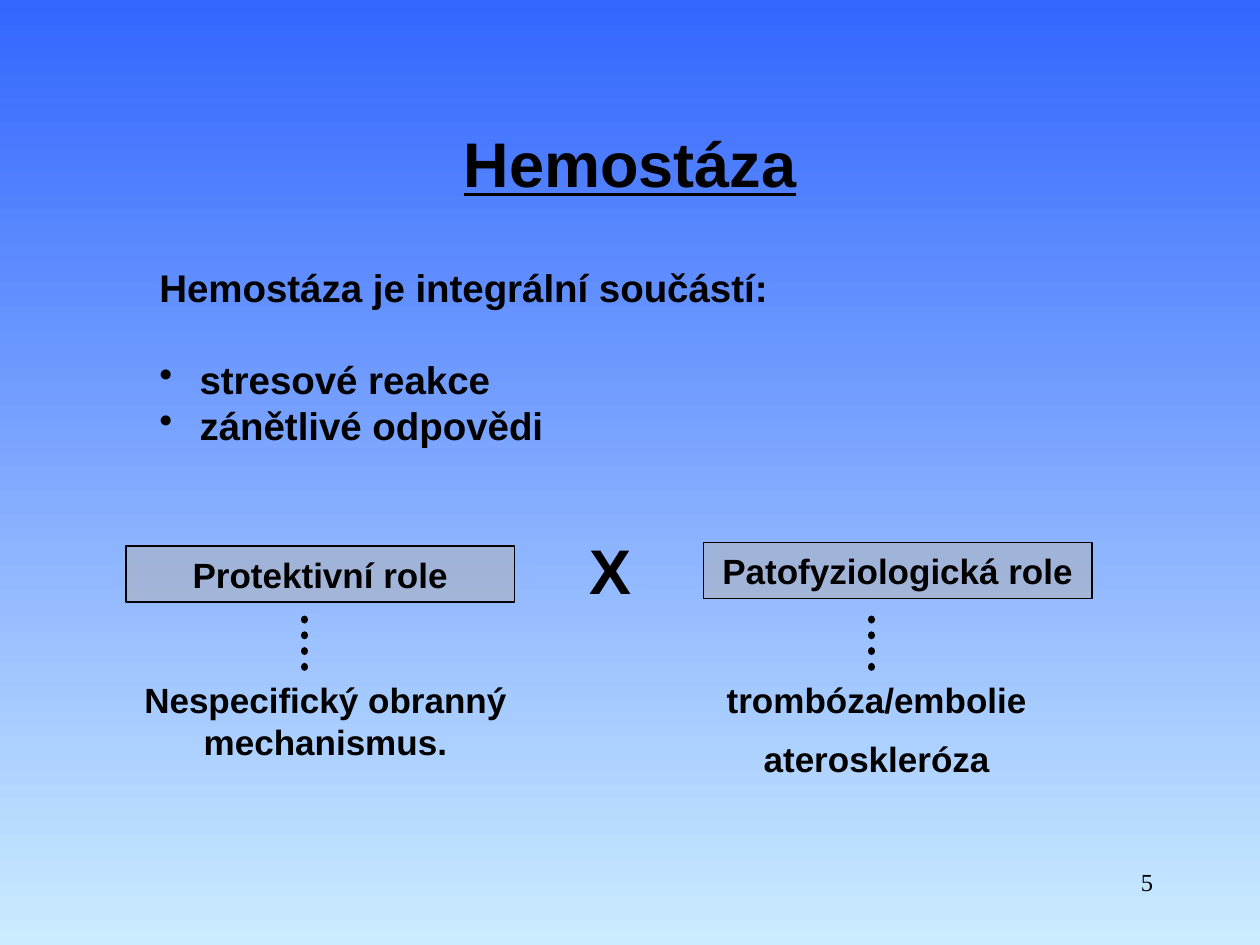
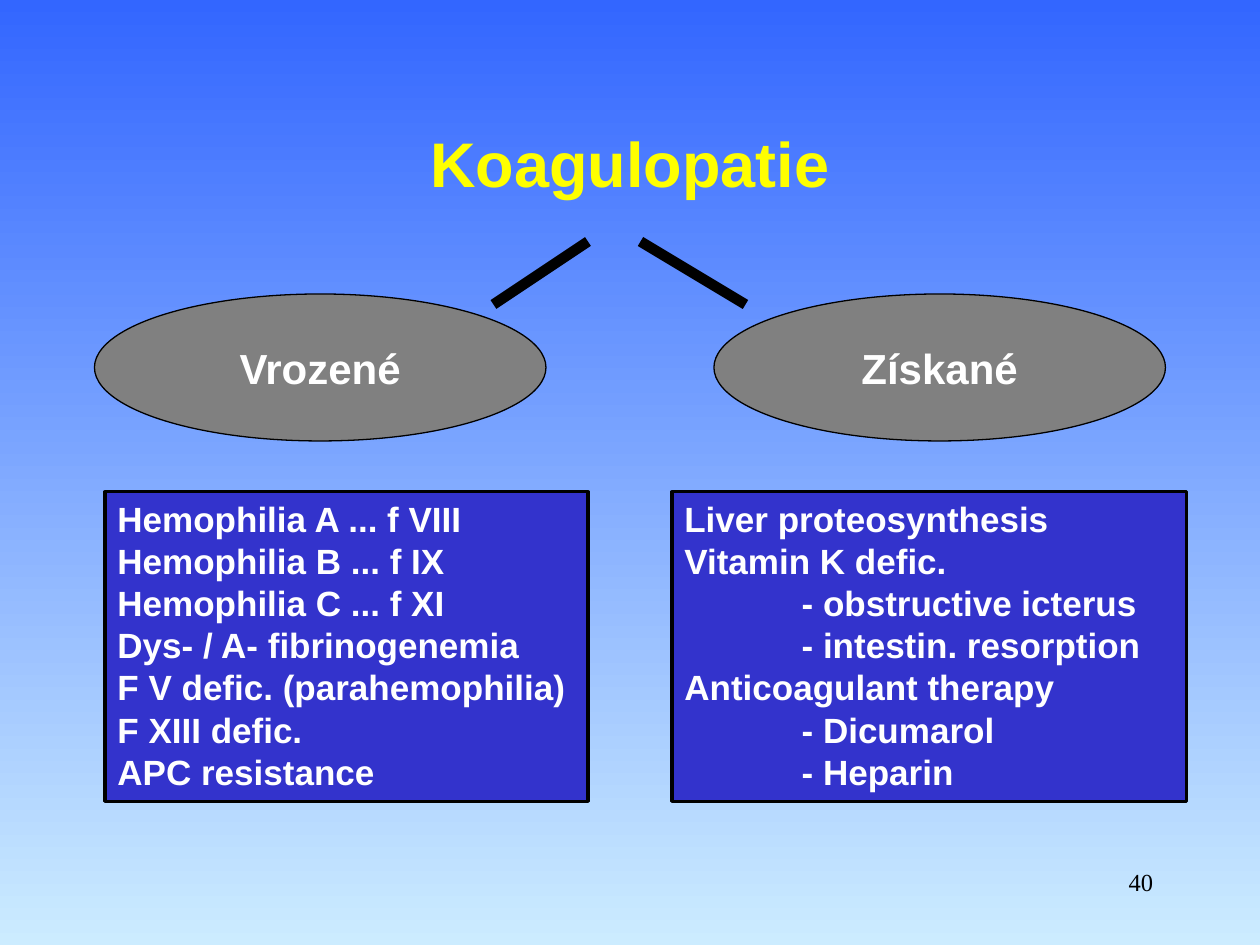
"""Build two slides on haemostasis and coagulopathies."""
from lxml import etree
from pptx import Presentation
from pptx.dml.color import RGBColor
from pptx.enum import dml, shapes, text
from pptx.oxml import ns
from pptx.util import Pt

SKY_TOP = RGBColor(0x33, 0x66, 0xFF)
SKY_BOTTOM = RGBColor(0xCC, 0xEC, 0xFF)
BLACK = RGBColor(0, 0, 0)
WHITE = RGBColor(0xFF, 0xFF, 0xFF)
YELLOW = RGBColor(0xFF, 0xFF, 0)
SILVER = RGBColor(0xB2, 0xB2, 0xB2)
GRAY = RGBColor(0x80, 0x80, 0x80)
INDIGO = RGBColor(0x33, 0x33, 0xCC)

LEFT, CENTER, RIGHT = text.PP_ALIGN.LEFT, text.PP_ALIGN.CENTER, text.PP_ALIGN.RIGHT
TOP, MIDDLE = text.MSO_ANCHOR.TOP, text.MSO_ANCHOR.MIDDLE
RECTANGLE, OVAL = shapes.MSO_SHAPE.RECTANGLE, shapes.MSO_SHAPE.OVAL

TITLE_AREA = (54, 48, 612, 90)
NUMBER_AREA = (516, 492, 150, 36)

INTRO = "Hemostáza je integrální součástí:"
INTRO_POINTS = ["stresové reakce", "zánětlivé odpovědi"]
ROLES = [
    {"name": "Protektivní role", "area": (72, 312, 222, 32), "dots_x": 174,
     "effects": ["Nespecifický obranný mechanismus."], "effects_area": (72, 384, 228, 55)},
    {"name": "Patofyziologická role", "area": (402, 310, 222, 32), "dots_x": 498,
     "effects": ["trombóza/embolie", "ateroskleróza"], "effects_area": (378, 384, 246, 68)},
]
ORIGINS = [
    {"name": "Vrozené", "oval_x": 54, "branch": (336, 138, 282, 174),
     "list_x": 60, "list_width": 276,
     "causes": ["Hemophilia A ... f VIII", "Hemophilia B ... f IX", "Hemophilia C ... f XI",
                "Dys- / A- fibrinogenemia", "F V defic. (parahemophilia)",
                "F XIII defic.", "APC resistance"]},
    {"name": "Získané", "oval_x": 408, "branch": (366, 138, 426, 174),
     "list_x": 384, "list_width": 294,
     "causes": ["Liver proteosynthesis", "Vitamin K defic.", "- obstructive icterus",
                "- intestin. resorption", "Anticoagulant therapy", "- Dicumarol", "- Heparin"]},
]


def points(values):
    return [Pt(value) for value in values]


def write(box, lines, size, color=BLACK, align=LEFT, anchor=TOP, gap=0, wrap=True, **font):
    frame = box.text_frame
    frame.word_wrap, frame.vertical_anchor = wrap, anchor
    for index, line in enumerate(lines):
        para = frame.paragraphs[0] if index == 0 else frame.add_paragraph()
        para.alignment = align
        para.space_before = Pt(gap if index else 0)
        span = para.add_run()
        span.text = line
        span.font.color.rgb = color
        look = {"name": "Arial", "size": Pt(size), "bold": True, **font}
        for name, value in look.items():
            setattr(span.font, name, value)
    return frame.paragraphs


def indent(para, margin, first=0):
    layout = para._p.get_or_add_pPr()
    layout.set("marL", str(Pt(margin)))
    layout.set("indent", str(Pt(first)))
    return layout


def add_text(page, area, lines, size, **look):
    return write(page.shapes.add_textbox(*points(area)), lines, size, **look)


def add_box(page, kind, area, fill, line_width=0.75):
    box = page.shapes.add_shape(kind, *points(area))
    box.shadow.inherit = False
    box.fill.solid()
    box.fill.fore_color.rgb = fill
    box.line.color.rgb = BLACK
    box.line.width = Pt(line_width)
    return box


def add_line(page, ends, width, dotted=False):
    line = page.shapes.add_connector(shapes.MSO_CONNECTOR.STRAIGHT, *points(ends))
    line.line.color.rgb = BLACK
    line.line.width = Pt(width)
    if dotted:
        line.line.dash_style = dml.MSO_LINE.ROUND_DOT
        line.line._get_or_add_ln().set("cap", "rnd")
    etree.SubElement(line._element.spPr, ns.qn("a:effectLst"))


def paint_background(deck):
    fill = deck.slide_master.background.fill
    fill.gradient()
    fill.gradient_angle = 270
    for stop, color, position in zip(fill.gradient_stops, (SKY_TOP, SKY_BOTTOM), (0, 1)):
        stop.color.rgb, stop.position = color, position


def add_page(deck, title, number, **look):
    page = deck.slides.add_slide(deck.slide_layouts[5])
    heading = page.shapes.title
    heading.left, heading.top, heading.width, heading.height = points(TITLE_AREA)
    write(heading, [title], 36, align=CENTER, anchor=MIDDLE, **look)
    add_text(page, NUMBER_AREA, [number], 14, align=RIGHT, name="Times New Roman", bold=False)
    return page


def build_roles(deck):
    page = add_page(deck, "Hemostáza", "5", underline=True)
    paras = add_text(page, (84, 147.5, 552, 114), [INTRO, *INTRO_POINTS], 22)
    paras[1].space_before = Pt(26)
    for para in paras[1:]:
        bullet = etree.SubElement(indent(para, 23, -23), ns.qn("a:buChar"))
        bullet.set("char", "•")
    add_text(page, (330, 300, 42, 50), ["X"], 36)
    for role in ROLES:
        box = add_box(page, RECTANGLE, role["area"], SILVER)
        color = box.fill._xPr.find(".//" + ns.qn("a:srgbClr"))
        etree.SubElement(color, ns.qn("a:alpha")).set("val", "50000")
        write(box, [role["name"]], 20, align=CENTER, anchor=MIDDLE)
        add_line(page, (role["dots_x"], 354, role["dots_x"], 384), 4.5, dotted=True)
        add_text(page, role["effects_area"], role["effects"], 20, align=CENTER, gap=10)


def build_origins(deck):
    page = add_page(deck, "Koagulopatie", "40", color=YELLOW)
    for origin in ORIGINS:
        oval = add_box(page, OVAL, (origin["oval_x"], 168, 258, 84), GRAY)
        write(oval, [origin["name"]], 24, WHITE, CENTER, MIDDLE, wrap=False)
        add_line(page, origin["branch"], 6)
        area = (origin["list_x"], 281, origin["list_width"], 177)
        box = add_box(page, RECTANGLE, area, INDIGO, 1.75)
        for para in write(box, origin["causes"], 20, WHITE):
            if para.text.startswith("-"):
                indent(para, 67)


def main():
    deck = Presentation()
    deck.slide_width, deck.slide_height = Pt(720), Pt(540)
    paint_background(deck)
    build_roles(deck)
    build_origins(deck)
    deck.save("out.pptx")


if __name__ == "__main__":
    main()
